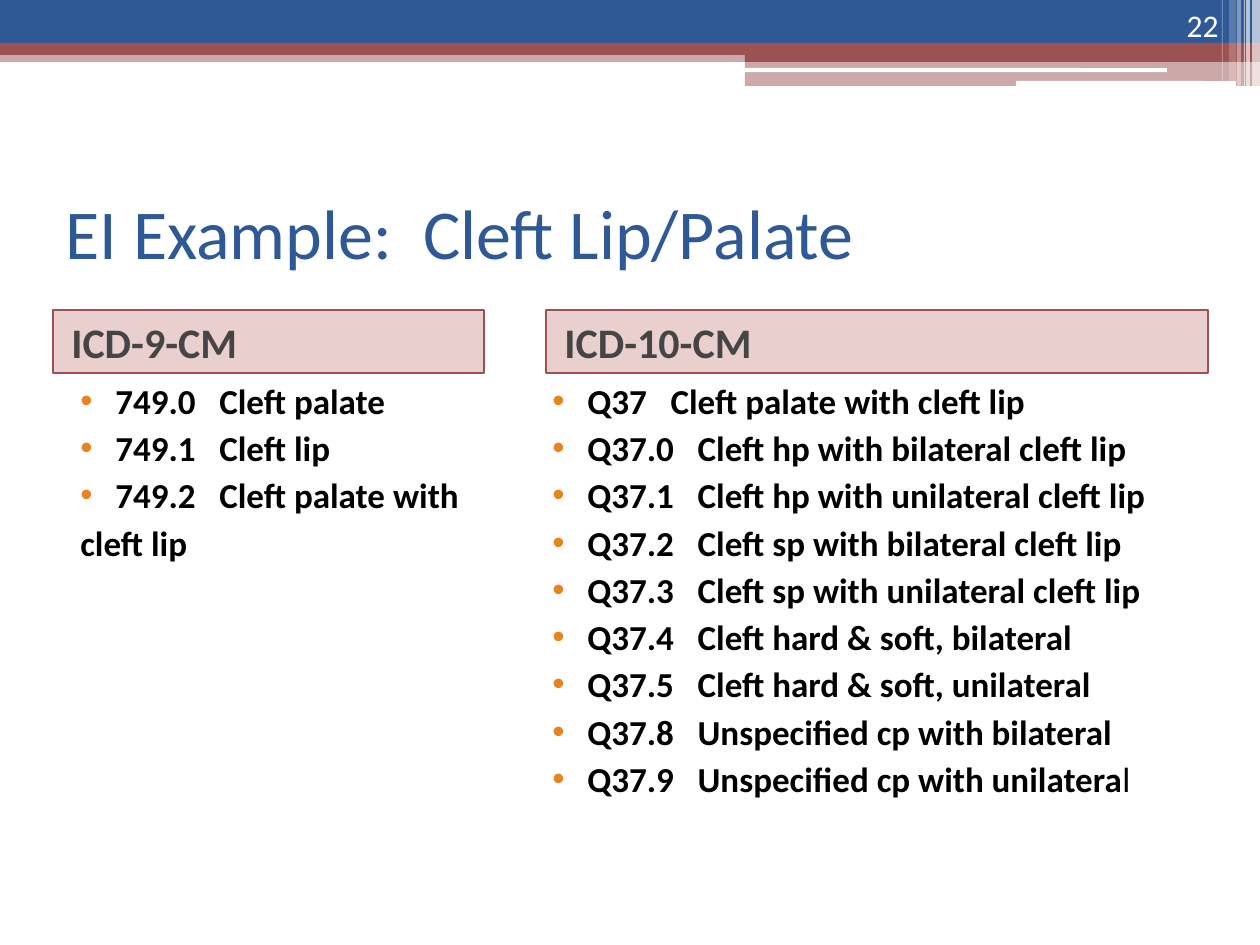
"""Build the cleft lip and palate code slide."""
from lxml.etree import SubElement
from pptx import Presentation
from pptx.dml.color import RGBColor
from pptx.enum.shapes import MSO_SHAPE
from pptx.enum.text import MSO_ANCHOR, PP_ALIGN
from pptx.oxml.ns import qn
from pptx.util import Pt

PX = 9144000 / 1260
BLUE, RED, WHITE = "2F5897", "9C5252", "FFFFFF"
hue = RGBColor.from_string


def block(spot, color, alpha=100, kind=MSO_SHAPE.RECTANGLE):
    shape = slide.shapes.add_shape(kind, *[round(n * PX) for n in spot])
    shape.shadow.inherit = False
    shape.line.fill.background()
    shape.fill.solid()
    shape.fill.fore_color.rgb = hue(color)
    if alpha < 100:
        tint = shape.fill._xPr.find(qn("a:solidFill"))[0]
        SubElement(tint, qn("a:alpha"), val=str(alpha * 1000))
    return shape


def write(frame, lines, size, color, bold=False, anchor=MSO_ANCHOR.MIDDLE,
          align=PP_ALIGN.LEFT, left=0, gap=0, dots=0):
    frame.word_wrap = True
    frame.vertical_anchor = anchor
    for i, line in enumerate(lines):
        para = frame.add_paragraph() if i else frame.paragraphs[0]
        para.alignment = align
        para.space_before = Pt(gap)
        props = para._p.get_or_add_pPr()
        props.set("marL", str(round((50 if i < dots else left) * PX)))
        props.set("indent", str(round((-35 if i < dots else 0) * PX)))
        if i < dots:
            tint = SubElement(props, qn("a:buClr"))
            SubElement(tint, qn("a:srgbClr"), val="E68422")
            SubElement(props, qn("a:buFont"), typeface="Arial")
            SubElement(props, qn("a:buChar"), char="•")
        else:
            SubElement(props, qn("a:buNone"))
        para.add_run().text = line
        font = para.font
        font.name, font.size, font.bold = "Calibri", Pt(size), bold
        font.color.rgb = hue(color)


deck = Presentation()
deck.slide_width, deck.slide_height = round(1260 * PX), round(945 * PX)
slide = deck.slides.add_slide(deck.slide_layouts[5])

for spot, color, alpha in [
    ((0, 50, 1260, 12), RED, 50),
    ((0, 0, 1260, 43), BLUE, 100),
    ((0, 43, 1260, 12), RED, 100),
    ((745, 49, 515, 13), RED, 100),
    ((745, 61, 515, 25), RED, 50),
]:
    block(spot, color, alpha)

for spot in [(745, 68, 422, 4), (1016, 81, 220, 5)]:
    block(spot, WHITE, kind=MSO_SHAPE.ROUNDED_RECTANGLE)

for left, width, high, alpha in [
    (1252, 8, 86, 65), (1246, 4, 86, 65), (1244, 1, 86, 60),
    (1237, 4, 86, 40), (1229, 7, 81, 20), (1222, 1, 81, 30),
]:
    block((left, 0, width, high), WHITE, alpha)

title = slide.shapes.title
title.left, title.top, title.width, title.height = [
    round(n * PX) for n in (53, 158, 1155, 147)]
write(title.text_frame, ["EI Example:  Cleft Lip/Palate"], 40, BLUE)

old = ["749.0   Cleft palate", "749.1   Cleft lip",
       "749.2   Cleft palate with", "cleft lip"]
new = [
    "Q37   Cleft palate with cleft lip",
    "Q37.0   Cleft hp with bilateral cleft lip",
    "Q37.1   Cleft hp with unilateral cleft lip",
    "Q37.2   Cleft sp with bilateral cleft lip",
    "Q37.3   Cleft sp with unilateral cleft lip",
    "Q37.4   Cleft hard & soft, bilateral",
    "Q37.5   Cleft hard & soft, unilateral",
    "Q37.8   Unspecified cp with bilateral",
    "Q37.9   Unspecified cp with unilatera",
]
for name, left, width, start, span, codes, dots in [
    ("ICD-9-CM", 53, 431, 53, 557, old, 3),
    ("ICD-10-CM", 546, 662, 525, 682, new, 9),
]:
    head = block((left, 310, width, 63), "AE4040", 25)
    head.line.color.rgb = hue(RED)
    head.line.width = Pt(1)
    write(head.text_frame, [name], 24, "454545", True, left=6, gap=3)
    body = slide.shapes.add_textbox(
        *[round(n * PX) for n in (start, 373, span, 535)])
    write(body.text_frame, codes, 20, "000000", True, MSO_ANCHOR.TOP,
          left=15, gap=3, dots=dots)

tail = body.text_frame.paragraphs[-1].add_run()
tail.text = "l"
tail.font.bold = False

page = slide.shapes.add_textbox(*[round(n * PX) for n in (1126, 0, 105, 50)])
write(page.text_frame, ["22"], 18, WHITE, anchor=MSO_ANCHOR.BOTTOM,
      align=PP_ALIGN.RIGHT)

deck.save("out.pptx")
